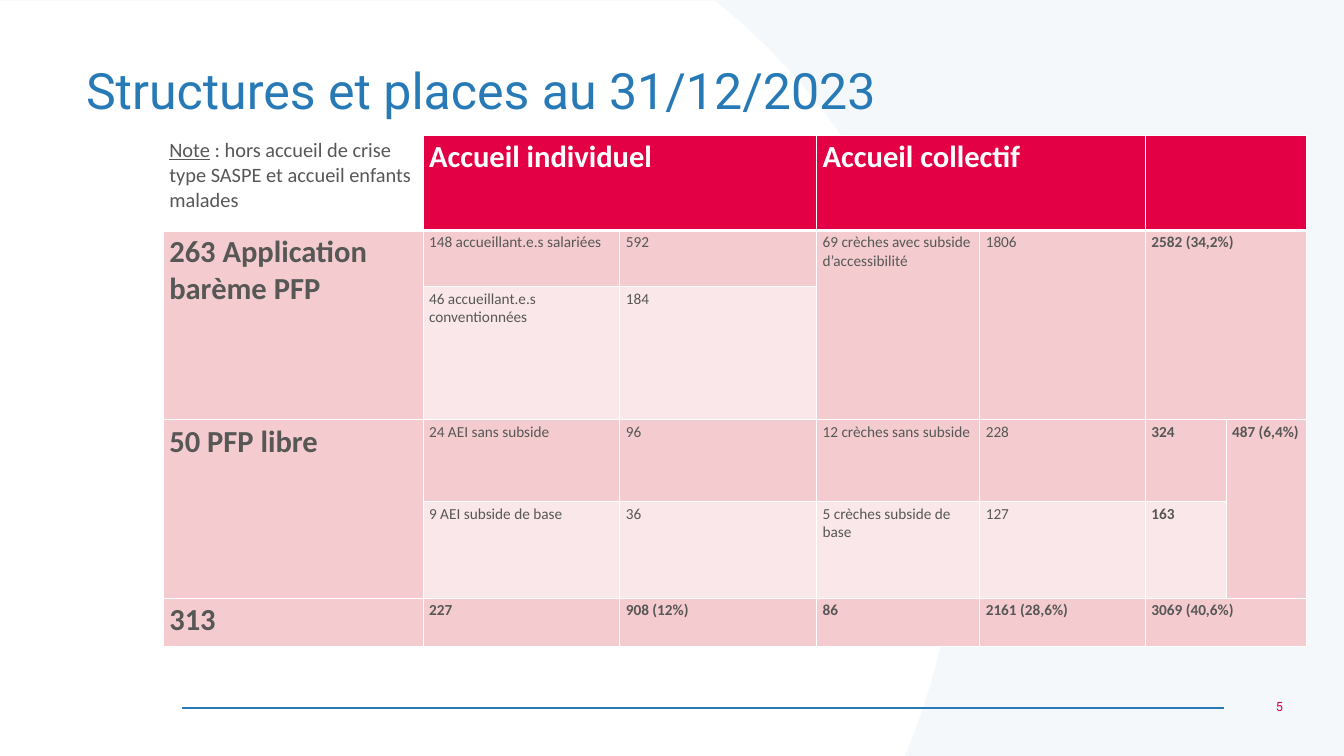
import lxml.etree
import pptx
import pptx.dml.color
import pptx.enum.shapes
import pptx.enum.text
import pptx.oxml
import pptx.oxml.ns
import pptx.util

Inches = pptx.util.Inches
Pt = pptx.util.Pt
PP_ALIGN = pptx.enum.text.PP_ALIGN

COLORS = {
    "blue": "277AB6", "pale_blue": "F4F8FB", "white": "FFFFFF", "red": "E30044",
    "grey": "575756", "pink": "F4CCCF", "light_pink": "FAE7E9",
}


def rgb(name):
    return pptx.dml.color.RGBColor.from_string(COLORS[name])


def add_run(paragraph, text, color, **font_values):
    run = paragraph.add_run()
    run.text = text
    run.font.color.rgb = rgb(color)
    for name, value in font_values.items():
        setattr(run.font, name, value)


presentation = pptx.Presentation()
presentation.slide_width = Inches(21.99)
presentation.slide_height = Inches(12.37)
slide = presentation.slides.add_slide(presentation.slide_layouts[6])

# Pale background with a large white curved panel
slide.background.fill.solid()
slide.background.fill.fore_color.rgb = rgb("pale_blue")
curves = [
    [(14.82, 12.33), (15.35, 11.07), (15.65, 9.68), (15.65, 8.23)],
    [(15.65, 8.23), (15.65, 4.96), (14.16, 2.04), (11.82, 0.11)],
]
outline = [(14.8, 12.38)]
steps = 30
for curve in curves:
    for step in range(steps + 1):
        t = step / steps
        weights = [(1 - t) ** 3, 3 * t * (1 - t) ** 2, 3 * t ** 2 * (1 - t), t ** 3]
        outline.append(tuple(
            sum(weight * point[axis] for weight, point in zip(weights, curve))
            for axis in (0, 1)))
outline += [(11.69, 0.01), (-0.01, 0.01)]
builder = slide.shapes.build_freeform(Inches(-0.01), Inches(12.38))
builder.add_line_segments([(Inches(x), Inches(y)) for x, y in outline], close=True)
panel = builder.convert_to_shape()
panel.shadow.inherit = False
panel.fill.solid()
panel.fill.fore_color.rgb = rgb("white")
panel.line.fill.background()

# Footer line
footer_line = slide.shapes.add_connector(
    pptx.enum.shapes.MSO_CONNECTOR.STRAIGHT,
    Inches(2.98), Inches(11.59), Inches(20.02), Inches(11.59))
footer_line.line.color.rgb = rgb("blue")
footer_line.line.width = Pt(2)
lxml.etree.SubElement(footer_line._element.spPr, pptx.oxml.ns.qn("a:effectLst"))

# Page number and title
text_boxes = [
    ("5", (20.02, 11.38, 1.07, 0.35), 15, "red", PP_ALIGN.RIGHT, 1),
    ("Structures et places au 31/12/2023", (1.31, 1.06, 16.06, 0.93), 59, "blue",
     PP_ALIGN.LEFT, 0.9),
]
for text, box, size, color, alignment, line_spacing in text_boxes:
    text_frame = slide.shapes.add_textbox(*map(Inches, box)).text_frame
    text_frame.word_wrap = True
    text_frame.vertical_anchor = pptx.enum.text.MSO_ANCHOR.MIDDLE
    paragraph = text_frame.paragraphs[0]
    paragraph.alignment = alignment
    paragraph.line_spacing = line_spacing
    add_run(paragraph, text, color, size=Pt(size), name="Roboto")

# Table grid
column_widths = [4.25, 3.22, 3.22, 2.67, 2.71, 1.32, 1.32]
row_heights = [1.56, 0.92, 2.18, 1.34, 1.58, 0.78]
rows = [
    ["", "Accueil individuel", "", "Accueil collectif", "", "", ""],
    ["263 Application barème PFP", "148 accueillant.e.s salariées", "592",
     "69 crèches avec subside d’accessibilité", "1806", "2582 (34,2%)", ""],
    ["", "46 accueillant.e.s conventionnées", "184", "", "", "", ""],
    ["50 PFP libre", "24 AEI sans subside", "96", "12 crèches sans subside", "228",
     "324", "487 (6,4%)"],
    ["", "9 AEI subside de base", "36", "5 crèches subside de base", "127", "163", ""],
    ["313", "227", "908 (12%)", "86", "2161 (28,6%)", "3069 (40,6%)", ""],
]
table = slide.shapes.add_table(
    len(rows), len(column_widths), Inches(2.67), Inches(2.21),
    Inches(sum(column_widths)), Inches(sum(row_heights))).table
table.first_row = False
table.horz_banding = False
for column, width in zip(table.columns, column_widths):
    column.width = Inches(width)
for row, height in zip(table.rows, row_heights):
    row.height = Inches(height)

# Merged areas: first row, first column, last row, last column
merges = [
    (0, 1, 0, 2), (0, 3, 0, 4), (0, 5, 0, 6),
    (1, 0, 2, 0), (1, 3, 2, 3), (1, 4, 2, 4), (1, 5, 2, 6),
    (3, 0, 4, 0), (3, 6, 4, 6), (5, 5, 5, 6),
]
for top, left, bottom, right in merges:
    table.cell(top, left).merge(table.cell(bottom, right))

# Cell borders, fills and text
for row_index, texts in enumerate(rows):
    is_header = row_index == 0
    for column_index, text in enumerate(texts):
        cell = table.cell(row_index, column_index)
        is_note = is_header and column_index == 0
        properties = cell._tc.get_or_add_tcPr()
        for side in ("L", "R", "T", "B") if is_header else ("L", "R", "B"):
            width = Pt(3 if is_header and side == "B" else 1)
            properties.append(pptx.oxml.parse_xml(
                f'<a:ln{side} {pptx.oxml.ns.nsdecls("a")} w="{width}"><a:solidFill>'
                f'<a:srgbClr val="{COLORS["white"]}"/></a:solidFill></a:ln{side}>'))
        if is_note:
            cell.fill.background()
        else:
            cell.fill.solid()
            shade = "light_pink" if row_index in (2, 4) else "pink"
            cell.fill.fore_color.rgb = rgb("red" if is_header else shade)
        if text:
            is_heading = is_header or column_index == 0
            add_run(cell.text_frame.paragraphs[0], text, "white" if is_header else "grey",
                    name="Calibri", size=Pt(36 if is_heading else 18),
                    bold=is_heading or row_index == 5 or column_index >= 5)

# Note in the top left cell
note = table.cell(0, 0).text_frame.paragraphs[0]
note_font = {"name": "Calibri", "size": Pt(24), "bold": False}
add_run(note, "Note", "grey", underline=True, **note_font)
add_run(note, " : hors accueil de crise type SASPE et accueil enfants malades", "grey",
        **note_font)

presentation.save("out.pptx")
